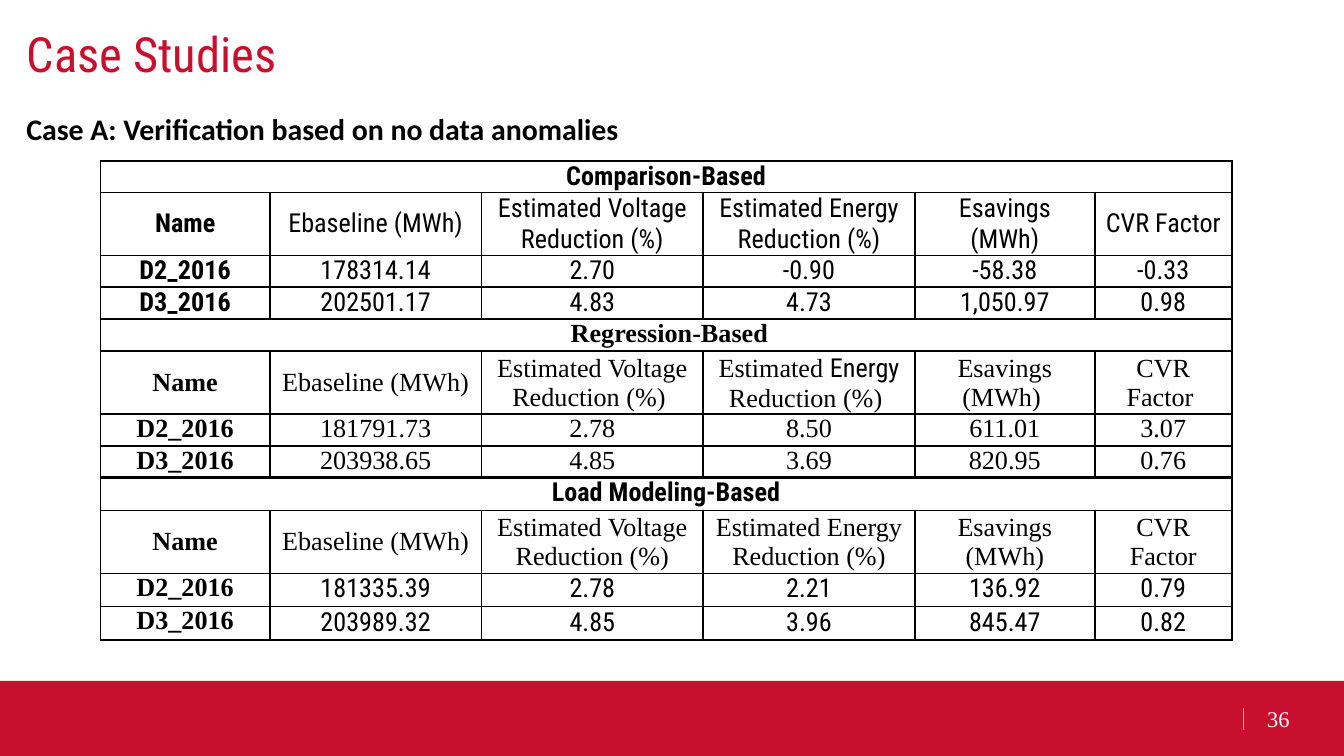
from lxml import etree
from pptx import Presentation
from pptx.dml.color import RGBColor
from pptx.enum.dml import MSO_THEME_COLOR
from pptx.enum.shapes import MSO_CONNECTOR, MSO_SHAPE
from pptx.enum.text import MSO_ANCHOR, MSO_AUTO_SIZE, PP_ALIGN
from pptx.oxml.ns import qn
from pptx.util import Cm, Pt

LINE, RECT = MSO_CONNECTOR.STRAIGHT, MSO_SHAPE.RECTANGLE
TOP, MID = MSO_ANCHOR.TOP, MSO_ANCHOR.MIDDLE
LEFT, CENTER = PP_ALIGN.LEFT, PP_ALIGN.CENTER
GROW, FIXED = MSO_AUTO_SIZE.SHAPE_TO_FIT_TEXT, MSO_AUTO_SIZE.NONE

INK = {"red": "C8102E", "gold": "F1BE48", "black": "000000", "white": "FFFFFF"}
ROB, TIMES, CAL = "Roboto Condensed", "Times New Roman", "Calibri"

COLS = [3.2, 4, 4.19, 4, 3.4, 2.59]
HEADS = ["Name", "Ebaseline (MWh)", "Estimated Voltage Reduction (%)",
         "Estimated Energy Reduction (%)", "Esavings (MWh)", "CVR Factor"]
MIXED = [("Estimated ", TIMES), ("Energy", ROB), (" Reduction (%) ", TIMES)]
SPACED = HEADS[:1] + [head + " " for head in HEADS[1:]]

GROUPS = [
    {"title": "Comparison-Based", "top": 3.04, "rows": [0.6, 1.19, 0.6, 0.6],
     "fonts": (ROB, ROB, ROB, ROB), "heads": HEADS,
     "data": [["D2_2016", "178314.14", "2.70", "-0.90", "-58.38", "-0.33"],
              ["D3_2016", "202501.17", "4.83", "4.73", "1,050.97", "0.98"]]},
    {"title": " Regression-Based", "top": 6.04, "rows": [0.6, 1.19, 0.6, 0.6],
     "fonts": (TIMES, TIMES, TIMES, TIMES),
     "heads": SPACED[:3] + [MIXED] + SPACED[4:],
     "data": [["D2_2016", "181791.73", "2.78", "8.50", "611.01", "3.07"],
              ["D3_2016", "203938.65", "4.85", "3.69", "820.95", "0.76"]]},
    {"title": "Load Modeling-Based", "top": 9.02, "rows": [0.63, 1.18, 0.63, 0.63],
     "fonts": (ROB, TIMES, TIMES, ROB), "heads": HEADS,
     "data": [["D2_2016", "181335.39", "2.78", "2.21", "136.92", "0.79"],
              ["D3_2016", "203989.32", "4.85", "3.96", "845.47", "0.82"]]},
]


def rgb(name):
    """Look up a named colour."""
    return RGBColor.from_string(INK[name])


def write(frame, runs, size, color, bold=False, align=LEFT):
    """Fill the first paragraph of a frame with (text, font) runs."""
    para = frame.paragraphs[0]
    para.alignment = align
    for text, face in runs:
        run = para.add_run()
        run.text = text
        run.font.name, run.font.size, run.font.bold = face, Pt(size), bold
        run.font.color.rgb = rgb(color)


def edge(cell):
    """Draw thin black borders round a cell and clear its fill."""
    props = cell._tc.get_or_add_tcPr()
    for tag in ("a:lnL", "a:lnR", "a:lnT", "a:lnB"):
        line = etree.SubElement(props, qn(tag), w=str(Pt(1)))
        fill = etree.SubElement(line, qn("a:solidFill"))
        etree.SubElement(fill, qn("a:srgbClr"), val=INK["black"])
    cell.fill.background()


def fill_cell(cell, item, face, bold, anchor):
    """Write one table cell from a string or a list of runs."""
    cell.margin_left = cell.margin_right = Cm(0.18)
    cell.margin_top = cell.margin_bottom = 0
    cell.vertical_anchor = anchor
    runs = [(item, face)] if isinstance(item, str) else item
    write(cell.text_frame, runs, 14, "black", bold, CENTER)


def add_group(slide, group, left, top):
    """Place one titled table of results."""
    rows = group["rows"]
    table = slide.shapes.add_table(
        len(rows), len(COLS), Cm(left), Cm(top), Cm(sum(COLS)), Cm(sum(rows))).table
    table.first_row = table.horz_banding = False
    for col, width in zip(table.columns, COLS):
        col.width = Cm(width)
    for row, height in zip(table.rows, rows):
        row.height = Cm(height)
    for cell in table.iter_cells():
        edge(cell)
    table.cell(0, 0).merge(table.cell(0, len(COLS) - 1))
    title, head, name, value = group["fonts"]
    fill_cell(table.cell(0, 0), group["title"], title, True, TOP)
    for c, item in enumerate(group["heads"]):
        fill_cell(table.cell(1, c), item, head, c == 0, MID)
    for r, line in enumerate(group["data"], 2):
        for c, item in enumerate(line):
            fill_cell(table.cell(r, c), item, value if c else name, c == 0, TOP)


def add_title(slide, left, top, width, height):
    """Place the slide title."""
    title = slide.shapes.title
    title.left, title.top = Cm(left), Cm(top)
    title.width, title.height = Cm(width), Cm(height)
    frame = title.text_frame
    frame.auto_size, frame.vertical_anchor = FIXED, MID
    write(frame, [("Case Studies", ROB)], 26, "red")


def add_text(slide, left, top, width, height):
    """Place a text box and return its frame."""
    box = slide.shapes.add_textbox(Cm(left), Cm(top), Cm(width), Cm(height))
    box.text_frame.word_wrap = True
    return box.text_frame


def add_foot(slide, left, top, width, height):
    """Place the red footer band with its divider and page number."""
    band = slide.shapes.add_shape(RECT, Cm(left), Cm(top), Cm(width), Cm(height))
    band.shadow.inherit = False
    band.fill.solid()
    band.fill.fore_color.rgb = rgb("red")
    band.line.fill.background()
    x = left + width - 1.9
    rule = slide.shapes.add_connector(LINE, Cm(x), Cm(top + 0.51), Cm(x), Cm(top + 0.92))
    rule.line.color.rgb = rgb("gold")
    rule.line.width = Pt(0.75)
    etree.SubElement(rule._element.spPr, qn("a:effectLst"))
    frame = add_text(slide, x + 0.2, top + 0.33, 1.47, 0.76)
    frame.vertical_anchor = MID
    write(frame, [("36", TIMES)], 12, "white")


def main():
    """Build and save the slide."""
    deck = Presentation()
    deck.slide_width, deck.slide_height = Cm(25.4), Cm(14.29)
    slide = deck.slides.add_slide(deck.slide_layouts[5])
    slide.background.fill.solid()
    slide.background.fill.fore_color.rgb = rgb("white")
    add_foot(slide, 0, 12.87, 25.4, 1.42)
    add_title(slide, 0.25, 0.36, 24.1, 1.3)
    frame = add_text(slide, 0.25, 1.96, 21.38, 0.94)
    frame.auto_size = GROW
    write(frame, [("Case A: Verification based on no data anomalies", CAL)], 16, "black", True)
    for group in GROUPS:
        add_group(slide, group, 1.9, group["top"])
    deck.save("out.pptx")


if __name__ == "__main__":
    main()
